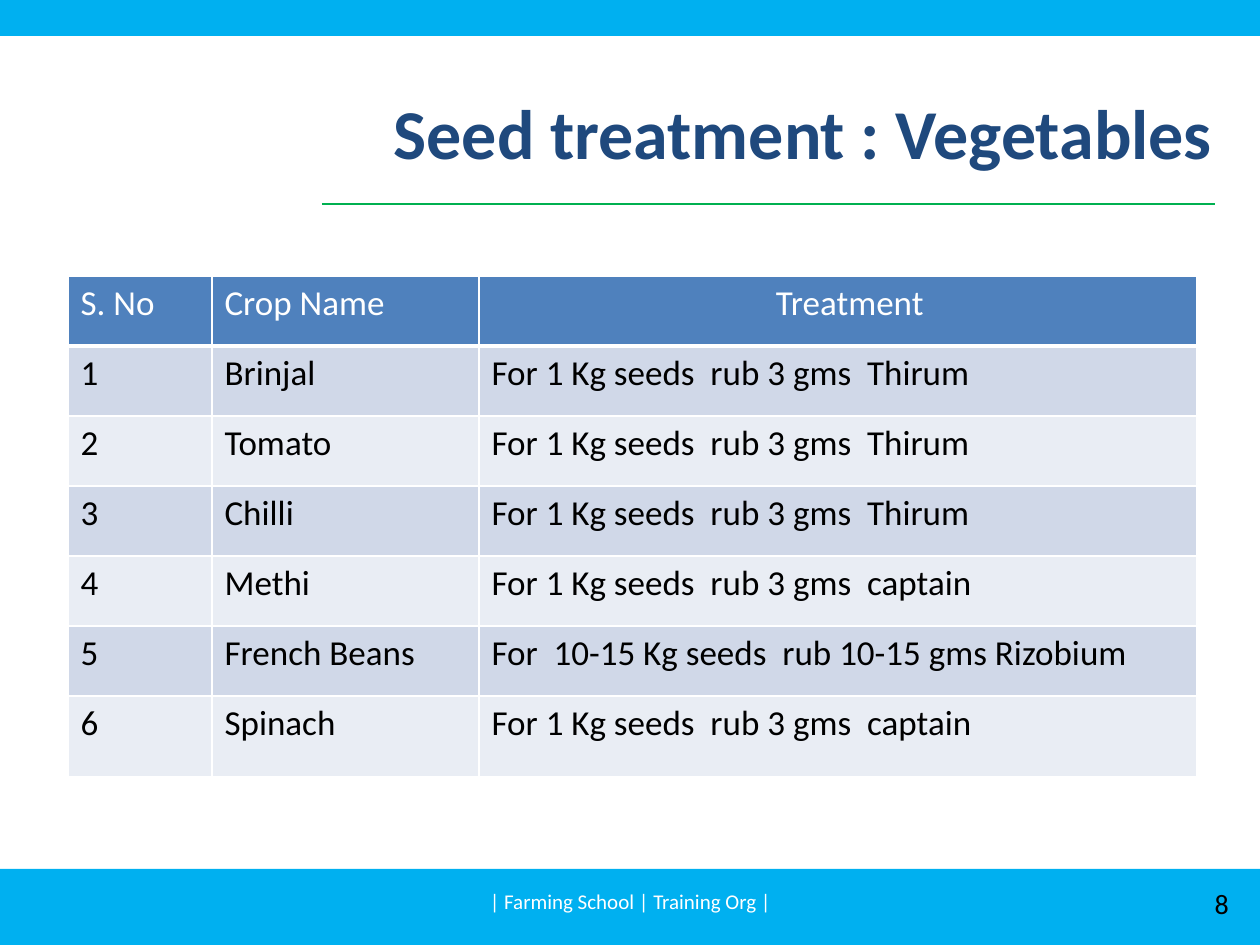
from pptx import Presentation
from pptx.dml.color import RGBColor
from pptx.enum.shapes import MSO_CONNECTOR, MSO_SHAPE
from pptx.enum.text import MSO_ANCHOR, PP_ALIGN
from pptx.oxml.ns import qn
from pptx.util import Emu, Pt
from lxml.etree import SubElement

PX_PER_INCH = 126
WIDTH, HEIGHT = 1260, 945
SKY, GREEN, NAVY, BLUE = "00B0F0", "00B050", "1F497D", "4F81BD"
BANDS = ("D0D8E8", "E9EDF4")
WHITE, BLACK = "FFFFFF", "000000"

THIRUM = "For 1 Kg seeds  rub 3 gms  Thirum"
CAPTAIN = "For 1 Kg seeds  rub 3 gms  captain"
CROPS = [
    ("Brinjal", THIRUM),
    ("Tomato", THIRUM),
    ("Chilli", THIRUM),
    ("Methi", CAPTAIN),
    ("French Beans", "For  10-15 Kg seeds  rub 10-15 gms Rizobium"),
    ("Spinach", CAPTAIN),
]


def px(n):
    return Emu(round(n * 914400 / PX_PER_INCH))


def rgb(color):
    return RGBColor.from_string(color)


class Deck:
    font = "Calibri"

    def __init__(self):
        self.prs = Presentation()
        self.prs.slide_width, self.prs.slide_height = px(WIDTH), px(HEIGHT)
        self.s = self.prs.slides.add_slide(self.prs.slide_layouts[6])

    def style(self, p, size, color, bold=False):
        for r in p.runs:
            r.font.name = self.font
            r.font.size = Pt(size)
            r.font.bold = bold
            r.font.color.rgb = rgb(color)

    def bar(self, x, y, w, h, color):
        sp = self.s.shapes.add_shape(MSO_SHAPE.RECTANGLE, px(x), px(y), px(w), px(h))
        sp.shadow.inherit = False
        sp.fill.solid()
        sp.fill.fore_color.rgb = rgb(color)
        sp.line.fill.background()

    def rule(self, x1, x2, y, color):
        line = self.s.shapes.add_connector(
            MSO_CONNECTOR.STRAIGHT, px(x1), px(y), px(x2), px(y))
        line.line.color.rgb = rgb(color)
        line.line.width = Pt(0.75)
        SubElement(line._element.spPr, qn("a:effectLst"))

    def text(self, x, y, w, h, text, size, color, align=PP_ALIGN.CENTER, bold=False):
        tf = self.s.shapes.add_textbox(px(x), px(y), px(w), px(h)).text_frame
        tf.word_wrap = True
        tf.vertical_anchor = MSO_ANCHOR.MIDDLE
        tf.text = text
        p = tf.paragraphs[0]
        p.alignment = align
        self.style(p, size, color, bold)

    def border(self, cell, bottom):
        tcPr = cell._tc.get_or_add_tcPr()
        widths = {"lnL": 1, "lnR": 1, "lnT": 1, "lnB": bottom}
        for i, (tag, width) in enumerate(widths.items()):
            ln = tcPr.makeelement(qn(f"a:{tag}"), {"w": str(Pt(width))})
            fill = SubElement(ln, qn("a:solidFill"))
            SubElement(fill, qn("a:srgbClr"), val=WHITE)
            tcPr.insert(i, ln)

    def table(self, x, y, widths, heights, rows, size):
        table = self.s.shapes.add_table(
            len(rows), len(widths), px(x), px(y),
            px(sum(widths)), px(sum(heights))).table
        for col, w in zip(table.columns, widths):
            col.width = px(w)
        for i, (row, h) in enumerate(zip(rows, heights)):
            table.rows[i].height = px(h)
            header = i == 0
            for j, value in enumerate(row):
                cell = table.cell(i, j)
                cell.text = value
                self.style(cell.text_frame.paragraphs[0], size, WHITE if header else BLACK)
                cell.fill.solid()
                cell.fill.fore_color.rgb = rgb(BLUE if header else BANDS[(i - 1) % 2])
                self.border(cell, 3 if header else 1)
        return table


def main():
    deck = Deck()

    # Bars and title rule
    deck.bar(0, 869, WIDTH, 76, SKY)
    deck.rule(322, 1215, 204, GREEN)
    deck.bar(0, 0, WIDTH, 36, SKY)

    # Title
    deck.text(378, 53, 850, 157, "Seed treatment : Vegetables", 40, NAVY, bold=True)

    # Treatment table
    rows = [("S. No", "Crop Name", "Treatment")]
    rows += [(str(n), *crop) for n, crop in enumerate(CROPS, 1)]
    table = deck.table(68, 276, [144, 267, 718], [70] * 6 + [81], rows, 20)
    table.cell(0, 2).margin_left = px(297)

    # Footer and slide number
    deck.text(431, 876, 399, 50, "| Farming School | Training Org |", 12, WHITE)
    deck.text(948, 878, 293, 50, "8", 16, BLACK, PP_ALIGN.RIGHT)

    deck.prs.save("out.pptx")


if __name__ == "__main__":
    main()
